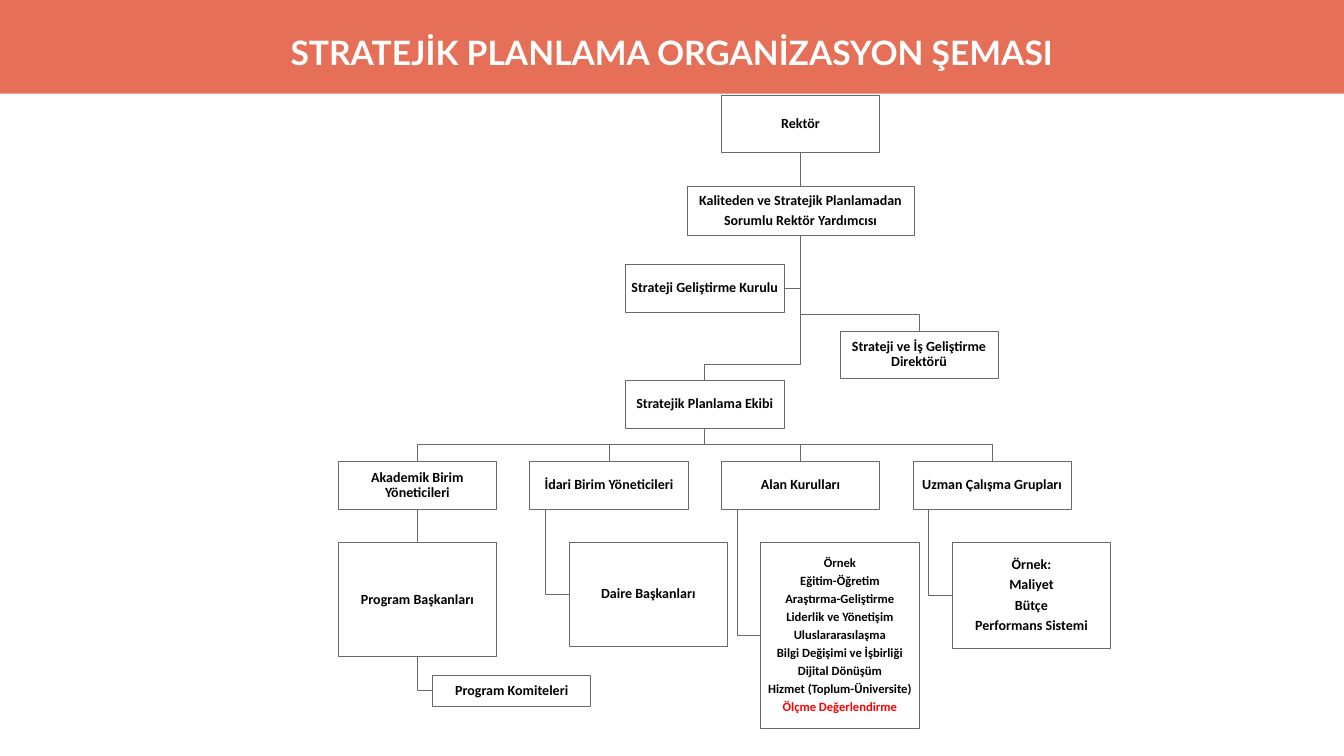
from lxml.etree import SubElement
from pptx import Presentation
from pptx.dml.color import RGBColor
from pptx.enum.shapes import MSO_CONNECTOR, MSO_SHAPE
from pptx.enum.text import MSO_ANCHOR, PP_ALIGN
from pptx.oxml.ns import qn
from pptx.util import Inches, Pt

LINE = "686A67"
WIDE, STEP = 3.14, 3.8
COL = [6.71 + STEP * i for i in range(4)]
ROW, SUB = 9.15, 10.76
INSET, DROP = 0.78, Inches(0.33)

FIELDS = ["Örnek", "Eğitim-Öğretim", "Araştırma-Geliştirme",
          "Liderlik ve Yönetişim", "Uluslararasılaşma",
          "Bilgi Değişimi ve İşbirliği", "Dijital Dönüşüm",
          "Hizmet (Toplum-Üniversite)", "Ölçme Değerlendirme"]
GROUPS = ["Örnek:", "Maliyet", "Bütçe", "Performans Sistemi"]


def rgb(code):
    return RGBColor.from_string(code)


def write(shape, lines, size=20, font="Calibri", color="000000", pad=0.01,
          space=0.9):
    frame = shape.text_frame
    frame.word_wrap = True
    frame.vertical_anchor = MSO_ANCHOR.MIDDLE
    frame.margin_left = frame.margin_right = Inches(pad)
    frame.margin_top = frame.margin_bottom = Inches(pad)
    for i, line in enumerate(lines):
        para = frame.paragraphs[0] if i == 0 else frame.add_paragraph()
        para.alignment = PP_ALIGN.CENTER
        para.line_spacing = space
        para.space_after = Pt(round(size * 0.35, 1))
        run = para.add_run()
        run.text = line
        run.font.size = Pt(size)
        run.font.name = font
        run.font.bold = True
        run.font.color.rgb = rgb(color)


def block(slide, x, y, w, h, fill="FFFFFF", line=None):
    shape = slide.shapes.add_shape(
        MSO_SHAPE.RECTANGLE, Inches(x), Inches(y), Inches(w), Inches(h))
    shape.shadow.inherit = False
    shape.fill.solid()
    shape.fill.fore_color.rgb = rgb(fill)
    if line:
        shape.line.color.rgb = rgb(line)
        shape.line.width = Pt(1)
    else:
        shape.line.fill.background()
    return shape


def unit(slide, x, y, h, *lines, w=WIDE, size=20):
    """Add one outlined box of the chart."""
    shape = block(slide, x, y, w, h, line=LINE)
    write(shape, lines, size=size)
    return shape


def middle(shape):
    return shape.left + shape.width // 2


def bottom(shape):
    return shape.top + shape.height


def bend(slide, start, *points):
    pen = slide.shapes.build_freeform(*start)
    pen.add_line_segments(points, close=False)
    shape = pen.convert_to_shape()
    shape.shadow.inherit = False
    shape.fill.background()
    shape.line.color.rgb = rgb(LINE)
    shape.line.width = Pt(1)


def fork(slide, boss, child):
    """Run down from boss, across, then down to the top of child."""
    x, end = middle(boss), middle(child)
    turn = child.top - DROP
    bend(slide, (x, bottom(boss)), (x, turn), (end, turn), (end, child.top))


def hang(slide, boss, child, x):
    """Run down from boss at x, then across to the near side of child."""
    y = child.top + child.height // 2
    side = child.left if x < child.left else child.left + child.width
    bend(slide, (x, bottom(boss)), (x, y), (side, y))


def join(slide, boss, child):
    """Link two boxes that stand one above the other."""
    link = slide.shapes.add_connector(
        MSO_CONNECTOR.STRAIGHT, middle(boss), bottom(boss),
        middle(child), child.top)
    link.begin_connect(boss, 2)
    link.end_connect(child, 0)
    link.line.color.rgb = rgb(LINE)
    link.line.width = Pt(1)
    SubElement(link._element.spPr, qn("a:effectLst"))


def header(slide):
    block(slide, 0, 0, 26.66, 1.86, fill="E56F57")
    title = block(slide, 0, 0.57, 26.66, 0.91, fill="E56F57")
    write(title, ["STRATEJİK PLANLAMA ORGANİZASYON ŞEMASI"], size=48,
          font="Lato", color="FFFFFF", pad=0.05, space=1)


def chart(slide):
    rector = unit(slide, COL[2], 1.9, 1.12, "Rektör")
    deputy = unit(slide, 13.63, 3.69, 0.98, "Kaliteden ve Stratejik Planlamadan",
                  "Sorumlu Rektör Yardımcısı", w=4.5)
    board = unit(slide, 12.41, 5.24, 0.96, "Strateji Geliştirme Kurulu")
    chief = unit(slide, 16.66, 6.57, 0.94, "Strateji ve İş Geliştirme Direktörü")
    team = unit(slide, 12.41, 7.55, 0.94, "Stratejik Planlama Ekibi")
    names = ["Akademik Birim Yöneticileri", "İdari Birim Yöneticileri",
             "Alan Kurulları", "Uzman Çalışma Grupları"]
    heads = [unit(slide, x, ROW, 0.95, name) for x, name in zip(COL, names)]

    join(slide, rector, deputy)
    hang(slide, deputy, board, middle(deputy))
    fork(slide, deputy, chief)
    fork(slide, deputy, team)
    for head in heads:
        fork(slide, team, head)

    program = unit(slide, COL[0], SUB, 2.27, "Program Başkanları")
    panel = unit(slide, 8.58, 13.39, 0.62, "Program Komiteleri")
    join(slide, heads[0], program)
    hang(slide, program, panel, middle(program))

    office = unit(slide, COL[1] + INSET, SUB, 2.07, "Daire Başkanları")
    fields = unit(slide, COL[2] + INSET, SUB, 3.69, *FIELDS, size=18)
    groups = unit(slide, COL[3] + INSET, SUB, 2.11, *GROUPS)
    last = fields.text_frame.paragraphs[-1].runs[0]
    last.font.color.rgb = rgb("FF0000")
    for head, child in zip(heads[1:], [office, fields, groups]):
        hang(slide, head, child, head.left + Inches(0.31))


def main():
    deck = Presentation()
    deck.slide_width, deck.slide_height = Inches(26.66), Inches(15)
    slide = deck.slides.add_slide(deck.slide_layouts[6])
    header(slide)
    chart(slide)
    deck.save("out.pptx")


if __name__ == "__main__":
    main()
